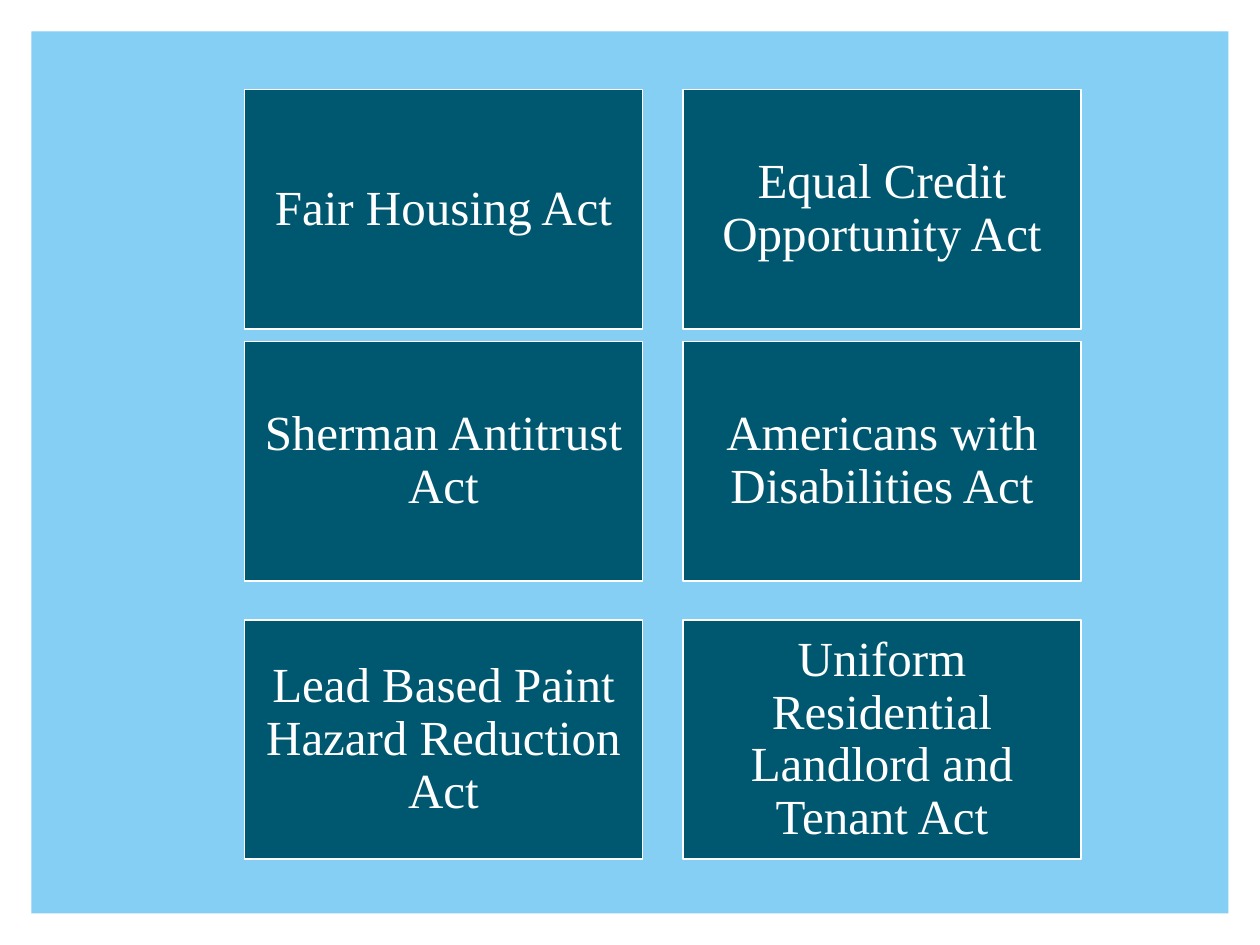
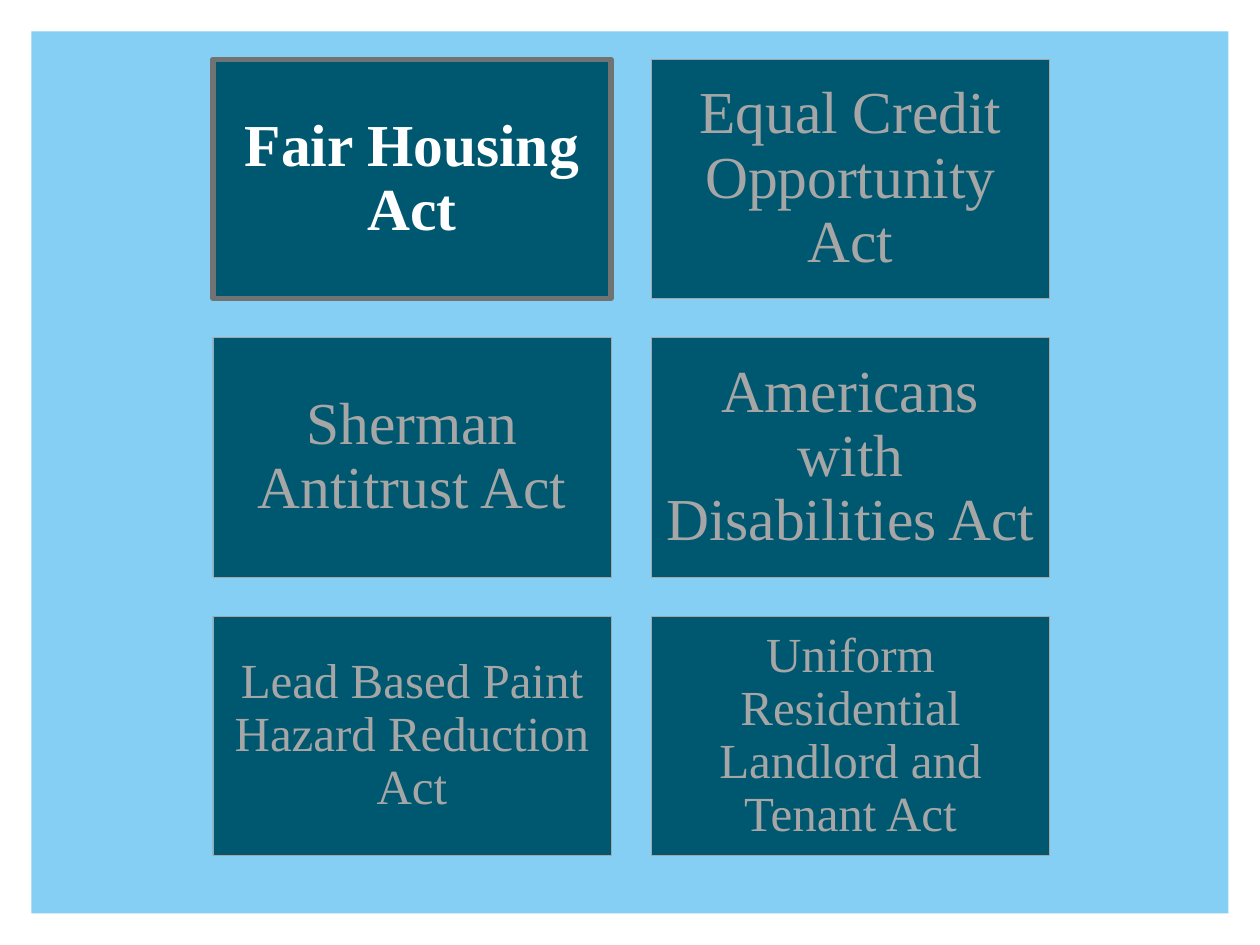
from dataclasses import dataclass
from itertools import product

from pptx import Presentation
from pptx.dml.color import RGBColor
from pptx.enum.shapes import MSO_SHAPE as Shape
from pptx.enum.text import MSO_ANCHOR as Anchor, PP_ALIGN as Align
from pptx.shapes.autoshape import Shape as AutoShape
from pptx.slide import Slide
from pptx.util import Inches, Pt

SKY = RGBColor(0x85, 0xCF, 0xF5)
TEAL = RGBColor(0x00, 0x58, 0x70)
WHITE = RGBColor(0xFF, 0xFF, 0xFF)
MUTED = RGBColor(0xA6, 0xA6, 0xA6)
FRAME = RGBColor(0x70, 0x73, 0x72)

FONT = "Times New Roman"
CARD_W, CARD_H = 3.16, 1.9
COLUMN_PITCH, ROW_PITCH = 3.48, 2.21

ACTS = (
    "Fair Housing Act",
    "Equal Credit Opportunity Act",
    "Sherman Antitrust Act",
    "Americans with Disabilities Act",
    "Lead Based Paint Hazard Reduction Act",
    "Uniform Residential Landlord and Tenant Act",
)


@dataclass(frozen=True)
class CardStyle:
    size: int
    color: RGBColor
    line: RGBColor
    line_width: float
    inset: float = 0.12
    bold: bool = False


OVERVIEW = CardStyle(28, WHITE, WHITE, 1)
CURRENT = CardStyle(34, WHITE, FRAME, 3, 0.14, bold=True)
DIMMED = CardStyle(34, MUTED, MUTED, 0.25, 0.14)
DIMMED_WIDE = CardStyle(34, MUTED, MUTED, 0.25, 0.11)
DIMMED_SMALL = CardStyle(28, MUTED, MUTED, 0.25)


@dataclass(frozen=True)
class ActGrid:
    left: float
    row_tops: tuple[float, ...]
    styles: tuple[CardStyle, ...]


GRIDS = (
    ActGrid(1.94, (0.71, 2.71, 4.92), (OVERVIEW,) * len(ACTS)),
    ActGrid(
        1.69,
        tuple(0.47 + row * ROW_PITCH for row in range(3)),
        (CURRENT, DIMMED, DIMMED, DIMMED_WIDE, DIMMED_SMALL, DIMMED_SMALL),
    ),
)


def add_rect(s: Slide, left: float, top: float, width: float, height: float,
             fill: RGBColor) -> AutoShape:
    sp = s.shapes.add_shape(Shape.RECTANGLE, Inches(left), Inches(top),
                            Inches(width), Inches(height))
    sp.shadow.inherit = False
    sp.fill.solid()
    sp.fill.fore_color.rgb = fill
    sp.line.fill.background()
    return sp


def add_card(s: Slide, left: float, top: float, act: str, style: CardStyle) -> None:
    sp = add_rect(s, left, top, CARD_W, CARD_H, TEAL)
    sp.line.color.rgb = style.line
    sp.line.width = Pt(style.line_width)

    tf = sp.text_frame
    tf.word_wrap = True
    tf.vertical_anchor = Anchor.MIDDLE
    tf.margin_left = tf.margin_right = Inches(style.inset)
    tf.margin_top = tf.margin_bottom = Inches(style.inset)

    p = tf.paragraphs[0]
    p.text = act
    p.alignment = Align.CENTER
    p.line_spacing = 0.9
    p.font.name = FONT
    p.font.size = Pt(style.size)
    p.font.bold = style.bold
    p.font.color.rgb = style.color


def add_act_slide(prs: Presentation, grid: ActGrid) -> None:
    s = prs.slides.add_slide(prs.slide_layouts[6])
    add_rect(s, 0.25, 0.25, 9.5, 7, SKY)
    cells = product(grid.row_tops, range(2))
    for (top, column), act, style in zip(cells, ACTS, grid.styles):
        add_card(s, grid.left + column * COLUMN_PITCH, top, act, style)


def main() -> None:
    prs = Presentation()
    prs.slide_width, prs.slide_height = Inches(10), Inches(7.5)
    for grid in GRIDS:
        add_act_slide(prs, grid)
    prs.save("out.pptx")


if __name__ == "__main__":
    main()
